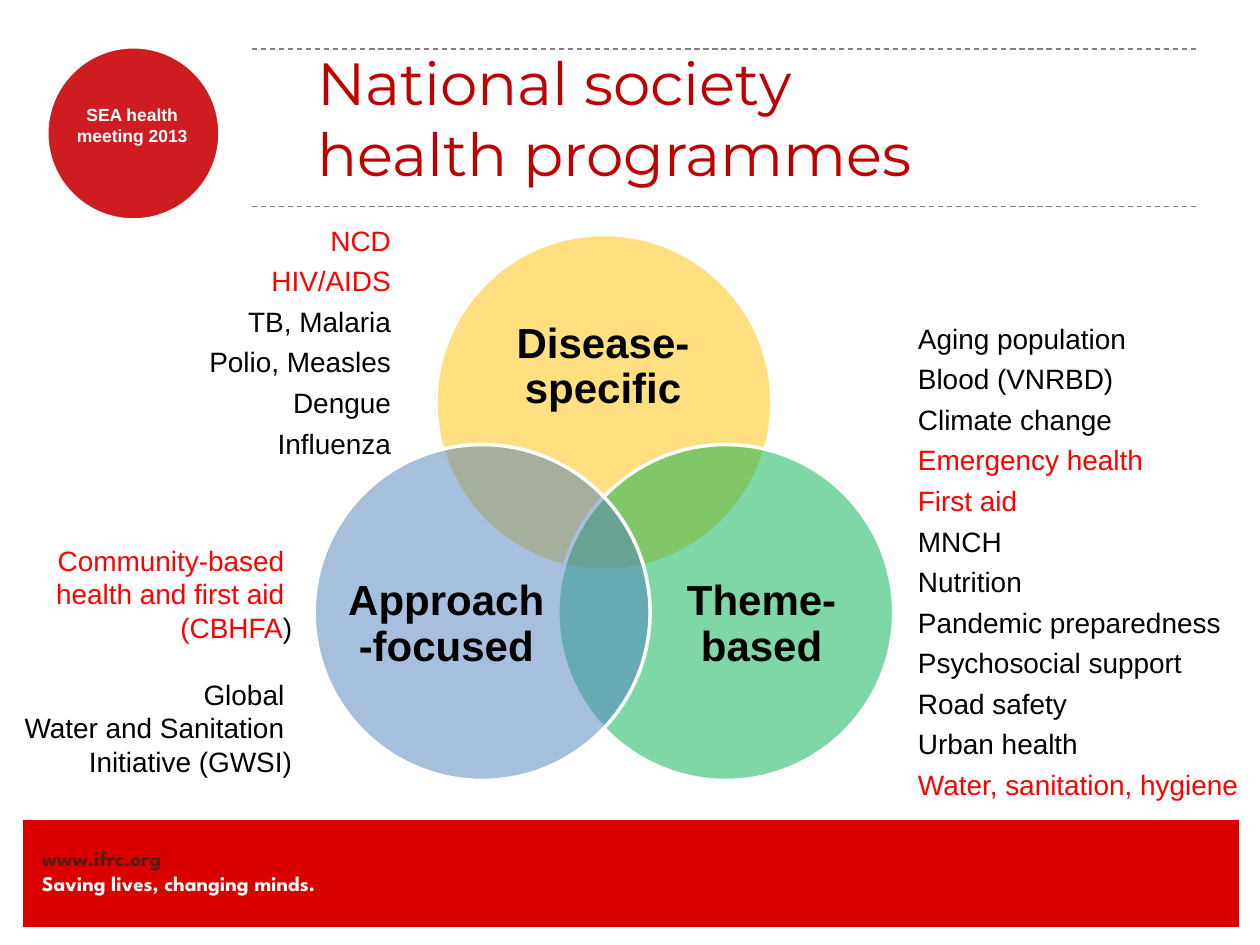
from lxml.etree import SubElement
from pptx import Presentation
from pptx.dml.color import RGBColor
from pptx.enum.dml import MSO_LINE
from pptx.enum.shapes import MSO_CONNECTOR, MSO_SHAPE
from pptx.enum.text import MSO_ANCHOR, MSO_AUTO_SIZE, PP_ALIGN
from pptx.oxml.ns import qn
from pptx.util import Pt

BLACK, WHITE, RED = "000000", "FFFFFF", "FF0000"


def paint(target, color):
    """Colour a fill, or the colour of a font."""
    if hasattr(target, "solid"):
        target.solid()
        target = target.fore_color
    target.rgb = RGBColor.from_string(color)


def style(run, size, color, face="Arial", bold=False):
    font = run.font
    font.size, font.name, font.bold = Pt(size), face, bold
    paint(font.color, color)


def add_shape(slide, kind, box, color, width, alpha=None):
    shape = slide.shapes.add_shape(kind, *map(Pt, box))
    shape.shadow.inherit = False
    paint(shape.fill, color)
    paint(shape.line.fill, WHITE)
    shape.line.width = Pt(width)
    if alpha:
        tone = shape.fill._xPr.find(".//" + qn("a:srgbClr"))
        SubElement(tone, qn("a:alpha"), val=str(alpha * 1000))


def add_text(slide, box, lines, size, face="Arial", bold=False,
             align=PP_ALIGN.LEFT, flush=True):
    """Write each line, a list of (text, colour) pairs, as a paragraph."""
    frame = slide.shapes.add_textbox(*map(Pt, box)).text_frame
    frame.word_wrap = True
    if flush:
        frame.margin_left = frame.margin_right = 0
        frame.margin_top = frame.margin_bottom = 0
    for i, parts in enumerate(lines):
        para = frame.add_paragraph() if i else frame.paragraphs[0]
        para.alignment = align
        for text, color in parts:
            run = para.add_run()
            run.text = text
            style(run, size, color, face, bold)
    return frame


def add_footer(slide, left, top, width, height):
    add_shape(slide, MSO_SHAPE.RECTANGLE, (left, top, width, height),
              "DB0000", 0.75)
    lines = [[("www.ifrc.org", "551C15")],
             [("Saving lives, changing minds.", WHITE)]]
    add_text(slide, (left + 11.5, top + 15, 246, 29), lines, 12,
             "League Spartan", True)


def add_badge(slide, left, top, size):
    add_shape(slide, MSO_SHAPE.OVAL, (left, top, size, size), "CF1C21", 2.5)
    add_text(slide, (left + 4, top + 33, 90, 24.5),
             [[("SEA health meeting 2013", WHITE)]], 10, bold=True,
             align=PP_ALIGN.CENTER)


def add_header(slide, left, top, width, height):
    """Set the title between two dashed rules."""
    for y in (top, top + height):
        rule = slide.shapes.add_connector(
            MSO_CONNECTOR.STRAIGHT, Pt(left), Pt(y), Pt(left + width), Pt(y))
        SubElement(rule._element.spPr, qn("a:effectLst"))
        paint(rule.line.fill, "808080")
        rule.line.width = Pt(0.75)
        rule.line.dash_style = MSO_LINE.DASH
    title = slide.shapes.title
    title.left, title.top = Pt(left + 30), Pt(top - 6)
    title.width, title.height = Pt(507.5), Pt(90)
    frame = title.text_frame
    frame.text = "National society\vhealth programmes"
    frame.auto_size = MSO_AUTO_SIZE.NONE
    frame.vertical_anchor = MSO_ANCHOR.MIDDLE
    para = frame.paragraphs[0]
    para.alignment = PP_ALIGN.LEFT
    for run in para.runs:
        style(run, 34, "C00000", "Montserrat")


def add_venn(slide, left, top, size):
    """Draw three overlapping circles, each with its label box inside."""
    shift, drop = size * 0.725, size * 0.625
    circles = [
        ("Disease-specific", "FFC000", shift / 2, 0, (25, 33, 141, 86)),
        ("Theme-based", "00B050", shift, drop, (59, 50, 115, 106)),
        ("Approach-focused", "4F81BD", 0, drop, (18, 50, 115, 106)),
    ]
    for text, color, dx, dy, (x, y, width, height) in circles:
        cx, cy = left + dx, top + dy
        add_shape(slide, MSO_SHAPE.OVAL, (cx, cy, size, size), color, 2, 50)
        frame = add_text(slide, (cx + x, cy + y, width, height),
                         [[(text, BLACK)]], 24, bold=True,
                         align=PP_ALIGN.CENTER)
        frame.vertical_anchor = MSO_ANCHOR.MIDDLE
        frame.paragraphs[0].line_spacing = 0.9


def add_list(slide, box, items, hot, align=PP_ALIGN.LEFT):
    """List the items, those in hot in red."""
    lines = [[(item, RED if item in hot else BLACK)] for item in items]
    frame = add_text(slide, box, lines, 16, align=align, flush=False)
    for para in frame.paragraphs[1:]:
        para.space_before = Pt(4)


def add_groups(slide, box):
    """Set the two programmes, one line apart."""
    lines = [[("Community-based ", RED)],
             [("health and first aid ", RED)],
             [("(CBHFA", RED), (")", BLACK)],
             [("Global ", BLACK)],
             [("Water and Sanitation ", BLACK)],
             [("Initiative (GWSI)", BLACK)]]
    frame = add_text(slide, box, lines, 16, align=PP_ALIGN.RIGHT, flush=False)
    frame.paragraphs[3].space_before = Pt(19)


def main():
    deck = Presentation()
    deck.slide_width, deck.slide_height = Pt(720), Pt(540)
    slide = deck.slides.add_slide(deck.slide_layouts[5])
    add_footer(slide, 12.5, 468, 696, 62)
    add_badge(slide, 26.5, 26.5, 99.5)
    add_header(slide, 144, 28, 540, 90)
    add_venn(slide, 179.5, 134, 192)
    add_list(slide, (517.5, 180, 230, 326),
             ["Aging population", "Blood (VNRBD)", "Climate change",
              "Emergency health", "First aid", "MNCH", "Nutrition",
              "Pandemic preparedness", "Psychosocial support", "Road safety",
              "Urban health", "Water, sanitation, hygiene"],
             ["Emergency health", "First aid", "Water, sanitation, hygiene"])
    add_list(slide, (78.5, 124, 152, 135),
             ["NCD", "HIV/AIDS", "TB, Malaria", "Polio, Measles", "Dengue",
              "Influenza"],
             ["NCD", "HIV/AIDS"], PP_ALIGN.RIGHT)
    add_groups(slide, (0, 307, 174, 143))
    deck.save("out.pptx")


if __name__ == "__main__":
    main()
